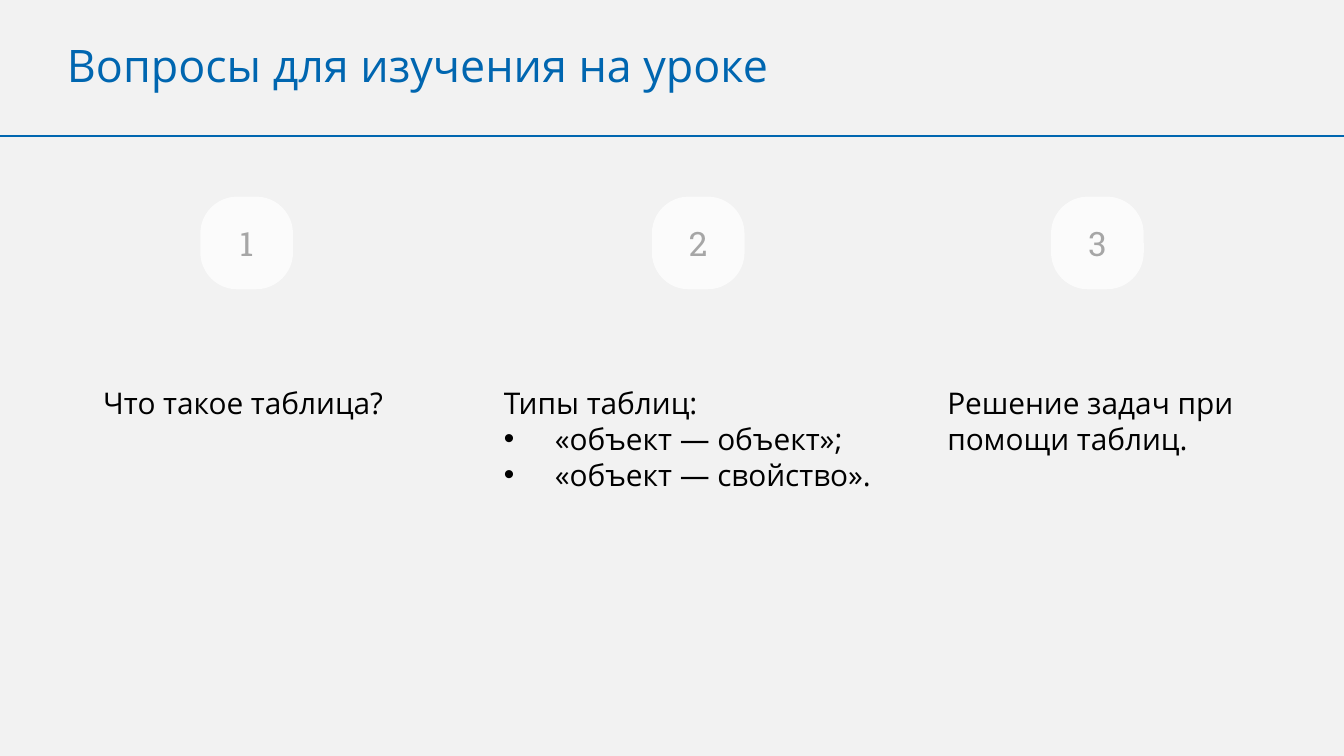
from lxml import etree
from pptx import Presentation, util as u
from pptx.dml.color import RGBColor
from pptx.enum import shapes, text
from pptx.oxml import ns

WIDTH = u.Inches(10)
HEIGHT = WIDTH * 9 // 16
BLUE, BLACK, GREY, WHITE, PAPER = "0066B0", "000000", "A6A6A6", "FFFFFF", "F2F2F2"
BULLET = "•"
QUESTIONS = [
    (6.7, 23.4, 6.6, 14.9, ["Что такое таблица?"]),
    (36.5, 30.9, 16.2, 48.5,
     ["Типы таблиц:", "•«объект — объект»;", "•«объект — свойство»."]),
    (69.5, 24.2, 11.4, 78.2, ["Решение задач при помощи таблиц."]),
]


def across(percent):
    """Return a share of the slide width."""
    return round(WIDTH * percent / 100)


def down(percent):
    """Return a share of the slide height."""
    return round(HEIGHT * percent / 100)


def paint(color_format, hex_color):
    """Apply a hex colour to a colour format."""
    color_format.rgb = RGBColor.from_string(hex_color)


def fill_solid(fill, hex_color):
    """Make a fill solid in a hex colour."""
    fill.solid()
    paint(fill.fore_color, hex_color)


def style(paragraph, size, face, hex_color):
    """Set the size, typeface and colour of a paragraph."""
    paragraph.font.size = u.Pt(size)
    paragraph.font.name = face
    paint(paragraph.font.color, hex_color)


def add_bullet(paragraph):
    """Give a paragraph a hanging bullet."""
    properties = paragraph._p.get_or_add_pPr()
    indent = u.Inches(0.38)
    properties.set("marL", str(indent))
    properties.set("indent", str(-indent))
    etree.SubElement(properties, ns.qn("a:buFont"), typeface="Arial")
    etree.SubElement(properties, ns.qn("a:buChar"), char=BULLET)


def add_text(slide, left, top, width, height, lines, size, hex_color):
    """Add a wrapping text box with one paragraph per line."""
    box = slide.shapes.add_textbox(across(left), down(top), across(width), down(height))
    frame = box.text_frame
    frame.word_wrap = True
    frame.auto_size = text.MSO_AUTO_SIZE.SHAPE_TO_FIT_TEXT
    frame.text = "\n".join(line.removeprefix(BULLET) for line in lines)
    for paragraph, line in zip(frame.paragraphs, lines):
        if line.startswith(BULLET):
            add_bullet(paragraph)
        style(paragraph, size, "Open Sans", hex_color)


def add_badge(slide, left, number):
    """Add a translucent rounded badge holding a number."""
    side = across(6.9)
    badge = slide.shapes.add_shape(
        shapes.MSO_SHAPE.ROUNDED_RECTANGLE, across(left), down(26), side, side)
    badge.adjustments[0] = 0.4
    badge.shadow.inherit = False
    badge.line.fill.background()
    fill_solid(badge.fill, WHITE)
    white = badge._element.spPr.find(".//" + ns.qn("a:srgbClr"))
    etree.SubElement(white, ns.qn("a:alpha"), val="75000")
    frame = badge.text_frame
    frame.margin_left = frame.margin_right = frame.margin_top = frame.margin_bottom = 0
    frame.word_wrap = False
    frame.vertical_anchor = text.MSO_ANCHOR.MIDDLE
    frame.text = str(number)
    label = frame.paragraphs[0]
    label.alignment = text.PP_ALIGN.CENTER
    style(label, 18, "Roboto Slab", GREY)


def add_rule(slide, top):
    """Draw a thin rule across the whole slide."""
    rule = slide.shapes.add_connector(
        shapes.MSO_CONNECTOR.STRAIGHT, 0, down(top), WIDTH, down(top))
    rule.line.width = u.Pt(1)
    paint(rule.line.color, BLUE)
    etree.SubElement(rule._element.spPr, ns.qn("a:effectLst"))


def main():
    """Build the lesson questions slide and save it."""
    lesson = Presentation()
    lesson.slide_width, lesson.slide_height = WIDTH, HEIGHT
    slide = lesson.slides.add_slide(lesson.slide_layouts[6])
    fill_solid(slide.background.fill, PAPER)
    add_text(slide, 4, 4.1, 81.2, 8.9, ["Вопросы для изучения на уроке"], 24, BLUE)
    add_rule(slide, 18)
    for number, (left, width, height, badge_left, lines) in enumerate(QUESTIONS, 1):
        add_text(slide, left, 50, width, height, lines, 16, BLACK)
        add_badge(slide, badge_left, number)
    lesson.save("out.pptx")


if __name__ == "__main__":
    main()
